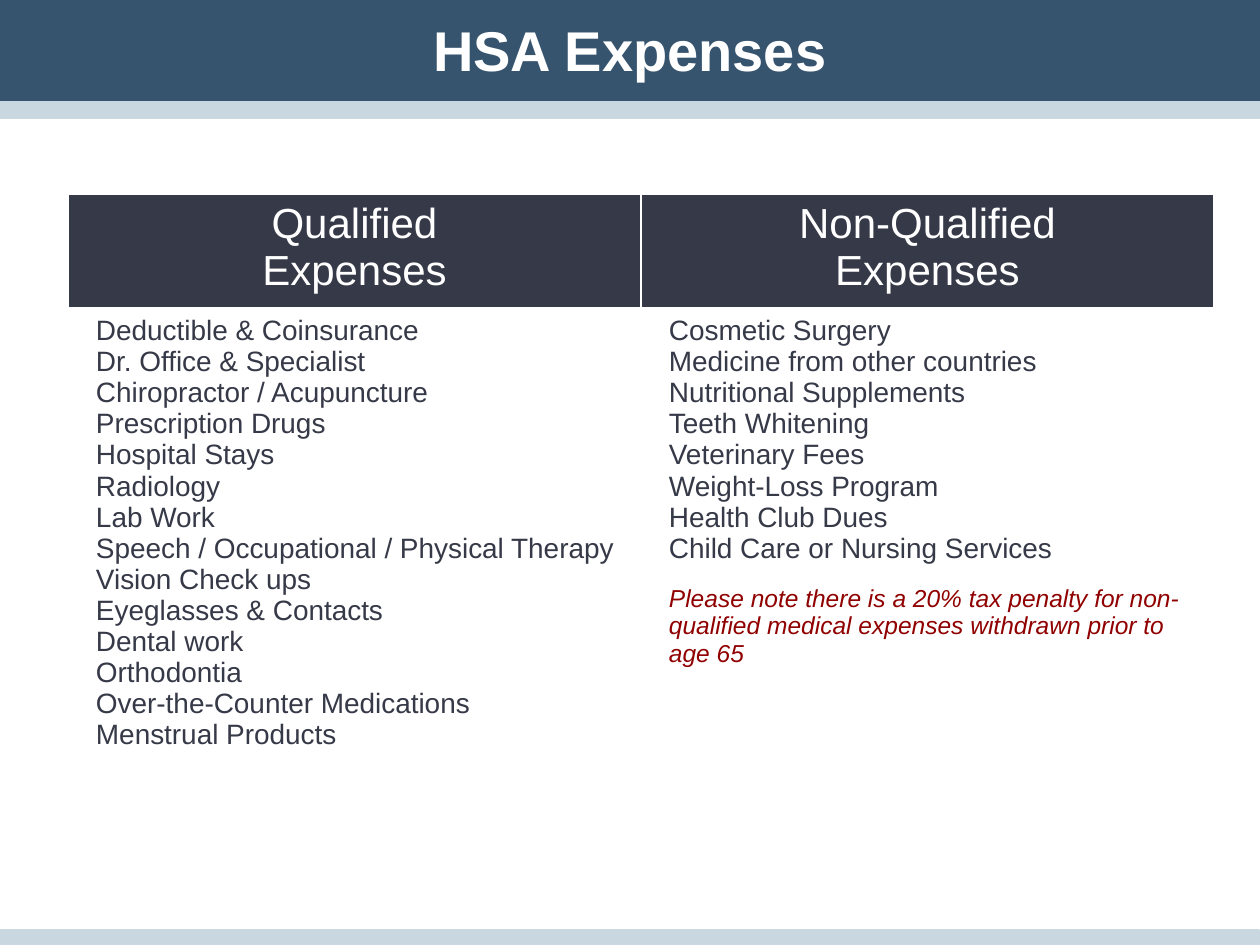
from lxml.etree import SubElement
from pptx import Presentation
from pptx.dml.color import RGBColor
from pptx.enum.shapes import MSO_SHAPE
from pptx.enum.text import MSO_ANCHOR, PP_ALIGN
from pptx.oxml.ns import qn
from pptx.util import Pt

EMU_PER_PX = 914400 / 126
NAVY = RGBColor(0x37, 0x54, 0x6F)
MIST = RGBColor(0xC9, 0xD8, 0xE0)
SLATE = RGBColor(0x36, 0x39, 0x47)
WHITE = RGBColor(0xFF, 0xFF, 0xFF)
DARK_RED = RGBColor(0x90, 0x00, 0x00)

QUALIFIED = [
    "Deductible & Coinsurance", "Dr. Office & Specialist",
    "Chiropractor / Acupuncture", "Prescription Drugs", "Hospital Stays",
    "Radiology", "Lab Work", "Speech / Occupational / Physical Therapy",
    "Vision Check ups", "Eyeglasses & Contacts", "Dental work", "Orthodontia",
    "Over-the-Counter Medications", "Menstrual Products",
]
NON_QUALIFIED = [
    "Cosmetic Surgery", "Medicine from other countries",
    "Nutritional Supplements", "Teeth Whitening", "Veterinary Fees",
    "Weight-Loss Program", "Health Club Dues", "Child Care or Nursing Services",
]
PENALTY_NOTE = ("Please note there is a 20% tax penalty for non-qualified medical "
                "expenses withdrawn prior to age 65")


def px(length):
    return round(length * EMU_PER_PX)


def write(paragraph, text, size=16, color=SLATE, bold=False, italic=False,
          align=PP_ALIGN.LEFT, before=0):
    paragraph.alignment = align
    paragraph.line_spacing = 1.0
    paragraph.space_before = Pt(before)
    run = paragraph.add_run()
    run.text = text
    font = run.font
    font.name, font.size = "Arial", Pt(size)
    font.bold, font.italic = bold, italic
    font.color.rgb = color


class ExpenseSlide:
    def __init__(self, presentation):
        self.slide = presentation.slides.add_slide(presentation.slide_layouts[5])

    def paint(self, shape, color):
        shape.fill.solid()
        shape.fill.fore_color.rgb = color
        shape.line.color.rgb = color
        shape.line.width = Pt(1)

    def title(self, text, left, top, width, height):
        banner = self.slide.shapes.title
        banner.left, banner.top = px(left), px(top)
        banner.width, banner.height = px(width), px(height)
        self.paint(banner, NAVY)
        banner.text_frame.vertical_anchor = MSO_ANCHOR.MIDDLE
        write(banner.text_frame.paragraphs[0], text, size=32, color=WHITE,
              bold=True, align=PP_ALIGN.CENTER)

    def bar(self, left, top, width, height):
        stripe = self.slide.shapes.add_shape(
            MSO_SHAPE.RECTANGLE, px(left), px(top), px(width), px(height))
        stripe.shadow.inherit = False
        self.paint(stripe, MIST)

    def table(self, left, top, column_widths, row_heights):
        frame = self.slide.shapes.add_table(
            len(row_heights), len(column_widths), px(left), px(top),
            px(sum(column_widths)), px(sum(row_heights)))
        grid = frame.table
        for column, width in zip(grid.columns, column_widths):
            column.width = px(width)
        for row, height in zip(grid.rows, row_heights):
            row.height = px(height)
        return grid

    def cell(self, cell, lines, fill, bottom=1, **style):
        # Borders come before the fill in the cell properties
        properties = cell._tc.get_or_add_tcPr()
        for side, width in (("L", 1), ("R", 1), ("T", 1), ("B", bottom)):
            edge = SubElement(properties, qn(f"a:ln{side}"), w=str(Pt(width)))
            solid = SubElement(edge, qn("a:solidFill"))
            SubElement(solid, qn("a:srgbClr"), val=str(WHITE))
        cell.fill.solid()
        cell.fill.fore_color.rgb = fill
        frame = cell.text_frame
        for index, line in enumerate(lines):
            paragraph = frame.add_paragraph() if index else frame.paragraphs[0]
            write(paragraph, line, **style)


def main():
    presentation = Presentation()
    presentation.slide_width, presentation.slide_height = px(1260), px(945)
    page = ExpenseSlide(presentation)

    # Title banner and stripes
    page.title("HSA Expenses", 0, -2, 1260, 103)
    page.bar(0, 102, 1260, 16)
    page.bar(-1, 930, 1260, 16)

    # Expense table
    expenses = page.table(68, 194, [573, 573], [115, 507])
    columns = [("Qualified", QUALIFIED), ("Non-Qualified", NON_QUALIFIED)]
    for index, (kind, items) in enumerate(columns):
        page.cell(expenses.cell(0, index), [kind, "Expenses"], SLATE, bottom=3,
                  size=24, color=WHITE, align=PP_ALIGN.CENTER)
        body = expenses.cell(1, index)
        body.margin_left = px(28)
        page.cell(body, items, WHITE)

    # Penalty note under the non-qualified list
    write(expenses.cell(1, 1).text_frame.add_paragraph(), PENALTY_NOTE, size=14,
          color=DARK_RED, italic=True, before=12)

    presentation.save("out.pptx")


if __name__ == "__main__":
    main()
